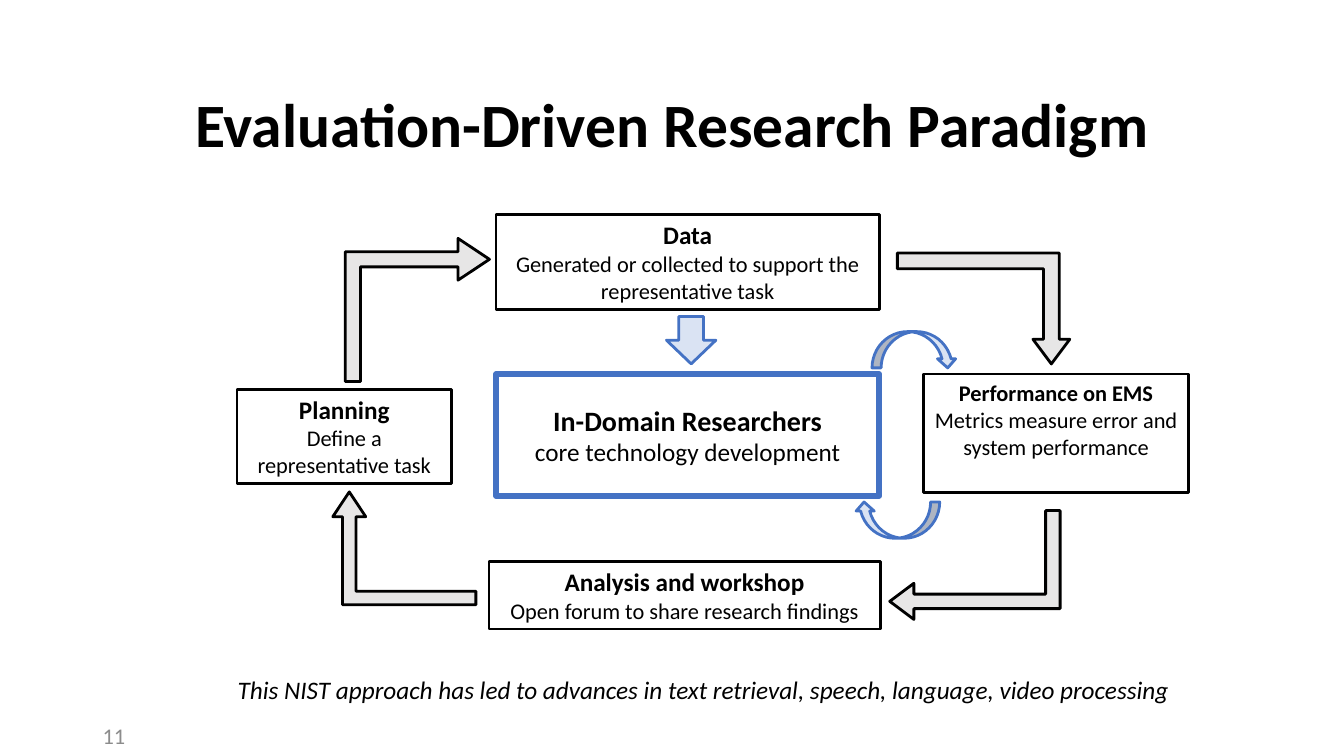
import copy
from dataclasses import dataclass

import pptx
import pptx.dml.color
import pptx.enum.shapes
import pptx.enum.text
import pptx.oxml.ns
import pptx.util

SLIDE_WIDTH = pptx.util.Inches(13.33)
SLIDE_HEIGHT = pptx.util.Inches(7.5)
FONT_NAME = "Calibri"
BLACK, GREY, BLUE = "000000", "8C8C8C", "4472C4"
PALE_BLUE, PALE_GREY = "DAE3F3", "E7E6E6"
TITLE_ONLY_LAYOUT = 5

Shapes = pptx.enum.shapes.MSO_SHAPE
Anchor = pptx.enum.text.MSO_ANCHOR
Alignment = pptx.enum.text.PP_ALIGN
AutoSize = pptx.enum.text.MSO_AUTO_SIZE


@dataclass(frozen=True)
class Area:
    """A frame in percent of the slide's width and height."""
    left: float
    top: float
    width: float
    height: float

    def lengths(self) -> tuple[int, int, int, int]:
        return (
            int(SLIDE_WIDTH * self.left / 100),
            int(SLIDE_HEIGHT * self.top / 100),
            int(SLIDE_WIDTH * self.width / 100),
            int(SLIDE_HEIGHT * self.height / 100),
        )


@dataclass(frozen=True)
class Stage:
    area: Area
    text: str
    heading_size: int = 18
    detail_size: int = 16
    line_color: str = BLACK
    line_width: float = 2
    anchor: Anchor = Anchor.TOP


@dataclass(frozen=True)
class Arrow:
    area: Area
    kind: Shapes
    fill_color: str
    line_color: str
    rotation: int = 0
    flip: str = ""
    adjustments: tuple[float, ...] = ()


STAGES = [
    Stage(Area(36.91, 28.4, 28.51, 12.53),
          "Data\vGenerated or collected to support the representative task"),
    Stage(Area(36.91, 49.47, 28.51, 16.13),
          "In-Domain Researchers\vcore technology development",
          20, 18, BLUE, 4, Anchor.MIDDLE),
    Stage(Area(17.63, 51.47, 15.98, 12.53),
          "Planning\vDefine a representative task"),
    Stage(Area(68.72, 49.47, 19.73, 15.73),
          "Performance on EMS\vMetrics measure error and system performance", 16),
    Stage(Area(36.38, 74.27, 29.11, 8.93),
          "Analysis and workshop\nOpen forum to share research findings"),
]

ARROWS = [
    Arrow(Area(49.59, 41.87, 3.68, 6.27), Shapes.DOWN_ARROW, PALE_BLUE, BLUE),
    Arrow(Area(66.69, 40.67, 2.7, 11.2), Shapes.CURVED_RIGHT_ARROW,
          PALE_BLUE, BLUE, 270, "flipH"),
    Arrow(Area(65.42, 63.2, 2.7, 11.2), Shapes.CURVED_RIGHT_ARROW,
          PALE_BLUE, BLUE, 90, "flipH"),
    Arrow(Area(66.77, 33.47, 12.83, 14.67), Shapes.BENT_UP_ARROW,
          PALE_GREY, BLACK, 0, "flipV", (0.142, 0.166, 0.222)),
    Arrow(Area(25.73, 31.47, 10.65, 19.07), Shapes.BENT_UP_ARROW,
          PALE_GREY, BLACK, 270, "flipV", (0.106, 0.146, 0.22)),
    Arrow(Area(68.49, 63.47, 8.1, 22.53), Shapes.BENT_UP_ARROW,
          PALE_GREY, BLACK, 90, "flipV", (0.133, 0.166, 0.222)),
    Arrow(Area(24.76, 65.07, 10.65, 14.93), Shapes.BENT_UP_ARROW,
          PALE_GREY, BLACK, 180, "flipV", (0.119, 0.146, 0.22)),
]


def color(hex_string: str) -> pptx.dml.color.RGBColor:
    return pptx.dml.color.RGBColor.from_string(hex_string)


def format_run(run, size: float, hex_string: str = BLACK,
               bold: bool = False, italic: bool = False) -> None:
    run.font.name = FONT_NAME
    run.font.size = pptx.util.Pt(size)
    run.font.bold = bold
    run.font.italic = italic
    run.font.color.rgb = color(hex_string)


def set_outline(shape, hex_string: str, width: float) -> None:
    shape.shadow.inherit = False
    shape.line.color.rgb = color(hex_string)
    shape.line.width = pptx.util.Pt(width)


def add_title(slide, area: Area, text: str) -> None:
    title = slide.shapes.title
    title.left, title.top, title.width, title.height = area.lengths()
    title.text_frame.text = text
    title.text_frame.vertical_anchor = Anchor.MIDDLE
    paragraph = title.text_frame.paragraphs[0]
    paragraph.alignment = Alignment.CENTER
    paragraph.line_spacing = 0.9
    format_run(paragraph.runs[0], 44, bold=True)


def add_stage(slide, stage: Stage) -> None:
    shape = slide.shapes.add_shape(Shapes.RECTANGLE, *stage.area.lengths())
    shape.fill.background()
    set_outline(shape, stage.line_color, stage.line_width)
    frame = shape.text_frame
    frame.text = stage.text
    frame.word_wrap = True
    frame.vertical_anchor = stage.anchor
    heading, detail = [run for paragraph in frame.paragraphs for run in paragraph.runs]
    format_run(heading, stage.heading_size, bold=True)
    format_run(detail, stage.detail_size)
    for paragraph in frame.paragraphs:
        paragraph.alignment = Alignment.CENTER
        for line_break in paragraph._p.findall(pptx.oxml.ns.qn("a:br")):
            line_break.append(copy.deepcopy(heading._r.rPr))


def add_arrow(slide, arrow: Arrow) -> None:
    shape = slide.shapes.add_shape(arrow.kind, *arrow.area.lengths())
    shape.fill.solid()
    shape.fill.fore_color.rgb = color(arrow.fill_color)
    set_outline(shape, arrow.line_color, 2)
    shape.rotation = arrow.rotation
    if arrow.flip:
        shape._element.spPr.xfrm.set(arrow.flip, "1")
    for index, value in enumerate(arrow.adjustments):
        shape.adjustments[index] = value


def add_text(slide, area: Area, text: str, size: float,
             hex_string: str = BLACK, italic: bool = False):
    """Add one line of text and return its text frame."""
    frame = slide.shapes.add_textbox(*area.lengths()).text_frame
    frame.text = text
    format_run(frame.paragraphs[0].runs[0], size, hex_string, italic=italic)
    return frame


def main() -> None:
    presentation = pptx.Presentation()
    presentation.slide_width = SLIDE_WIDTH
    presentation.slide_height = SLIDE_HEIGHT
    slide = presentation.slides.add_slide(presentation.slide_layouts[TITLE_ONLY_LAYOUT])

    add_title(slide, Area(6.9, 7.47, 86.27, 18.8), "Evaluation-Driven Research Paradigm")
    slide_number = add_text(slide, Area(6.9, 94.67, 22.5, 5.33), "11", 16, GREY)
    slide_number.word_wrap = True
    slide_number.vertical_anchor = Anchor.MIDDLE
    for stage in STAGES:
        add_stage(slide, stage)
    for arrow in ARROWS:
        add_arrow(slide, arrow)
    conclusion = add_text(
        slide, Area(16.95, 88.53, 71.57, 5.33),
        "This NIST approach has led to advances in text retrieval, "
        "speech, language, video processing", 18, italic=True)
    conclusion.word_wrap = False
    conclusion.auto_size = AutoSize.SHAPE_TO_FIT_TEXT

    presentation.save("out.pptx")


if __name__ == "__main__":
    main()
